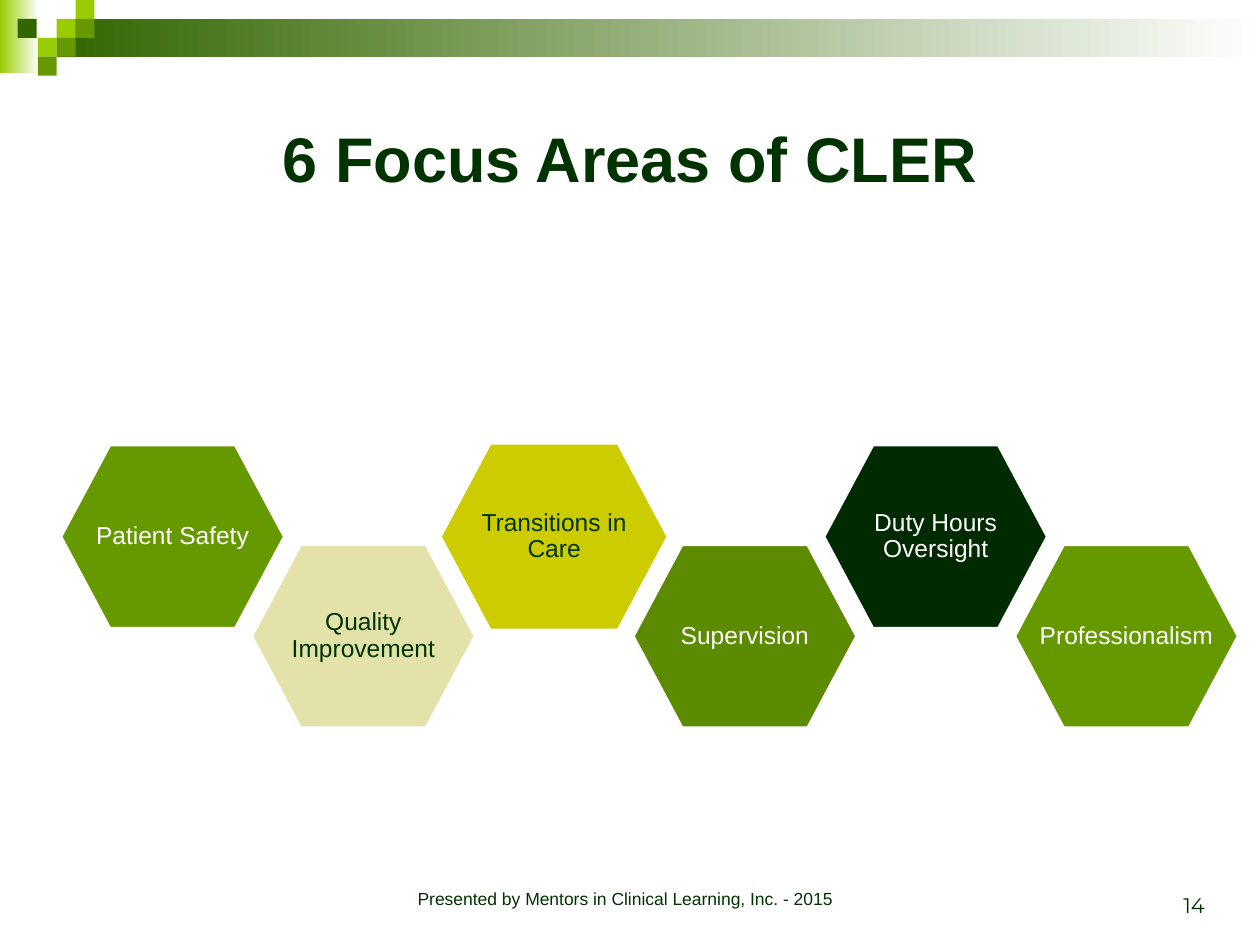
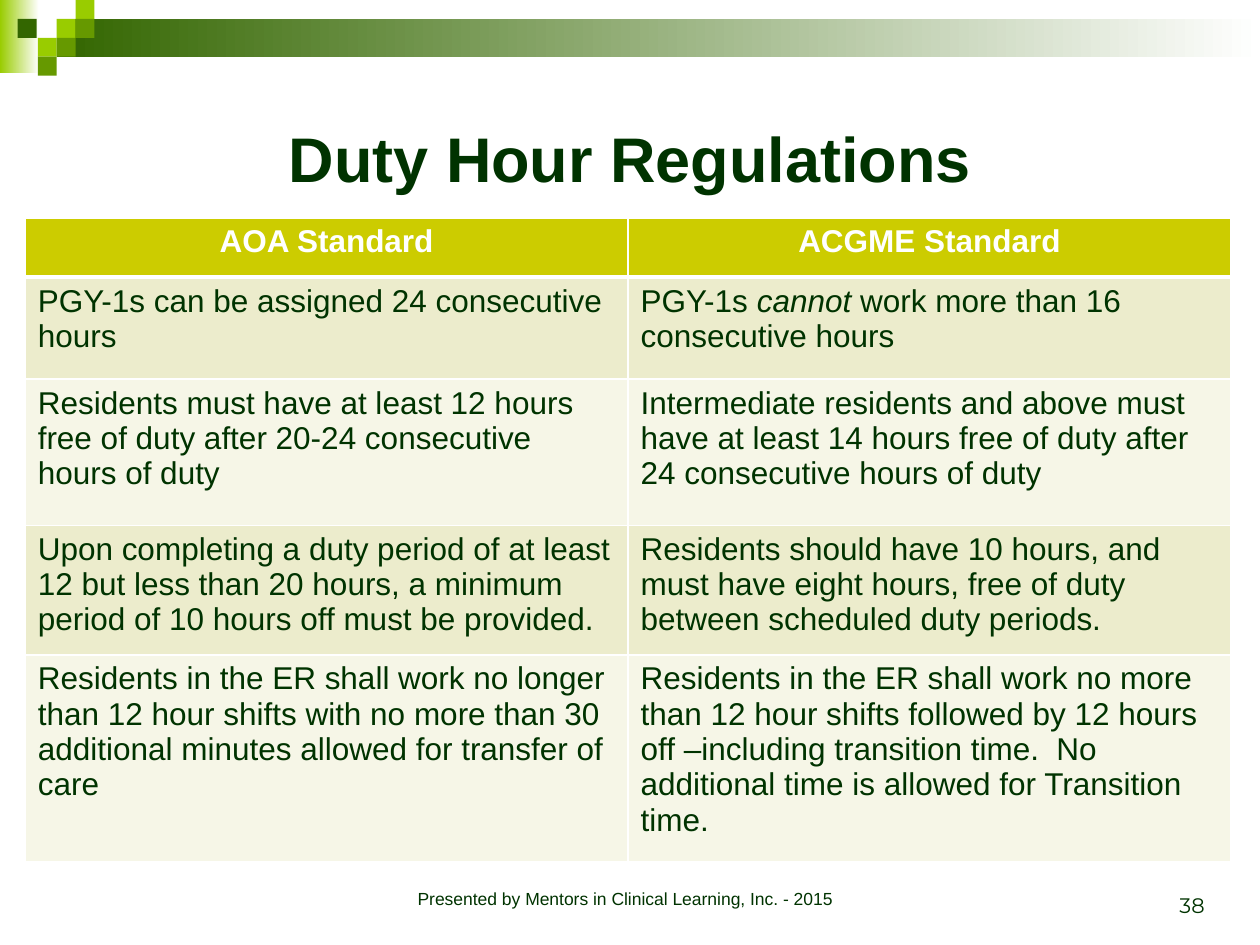
from lxml.etree import SubElement
from pptx import Presentation
from pptx.dml.color import RGBColor
from pptx.enum.shapes import MSO_SHAPE as Shape
from pptx.enum.text import MSO_ANCHOR as Anchor, PP_ALIGN as Align
from pptx.oxml.ns import qn
from pptx.util import Inches, Pt

# Shared palette
WHITE = RGBColor(0xFF, 0xFF, 0xFF)
INK = RGBColor(0x00, 0x33, 0x00)
LIME = RGBColor(0x99, 0xCC, 0x00)
LEAF = RGBColor(0x66, 0x99, 0x00)
MOSS = RGBColor(0x5C, 0x8A, 0x00)
FOREST = RGBColor(0x33, 0x66, 0x00)
NIGHT = RGBColor(0x00, 0x2A, 0x00)
OLIVE = RGBColor(0xCC, 0xCC, 0x00)
SAND = RGBColor(0xE2, 0xE2, 0xAA)
ROW_DARK = RGBColor(0xEC, 0xEC, 0xCC)
ROW_LIGHT = RGBColor(0xF6, 0xF6, 0xE7)

# Shared text styles
TITLE = {"name": "Arial", "size": Pt(36), "bold": True, "color": INK}
FOOTER = {"name": "Arial", "size": Pt(10), "color": INK}
NUMBER = {"name": "Montserrat", "size": Pt(12), "color": INK}
HEX_LABEL = {"name": "Arial", "size": Pt(14)}
HEADING = {"name": "Arial", "size": Pt(18), "bold": True, "color": WHITE}
BODY = {"name": "Arial", "size": Pt(18), "bold": False, "color": INK}

CREDIT = "Presented by Mentors in Clinical Learning, Inc. - 2015"

# Corner squares: left, top, colour
SQUARE = 0.15
SQUARES = [
    (0.45, 0.15, LIME), (0.6, 0, LIME), (0.6, 0.15, LEAF),
    (0.3, 0.3, LIME), (0.14, 0.15, FOREST),
    (0.45, 0.3, LEAF), (0.3, 0.45, LEAF),
]

FOCUS_AREAS = [
    ("Patient Safety", LEAF, WHITE),
    ("Quality Improvement", SAND, INK),
    ("Transitions in Care", OLIVE, INK),
    ("Supervision", MOSS, WHITE),
    ("Duty Hours Oversight", NIGHT, WHITE),
    ("Professionalism", LEAF, WHITE),
]

# Asterisks enclose italic words
REGULATIONS = [
    ("AOA Standard", "ACGME Standard"),
    ("PGY-1s can be assigned 24 consecutive hours",
     "PGY-1s *cannot* work more than 16 consecutive hours"),
    ("Residents must have at least 12 hours free of duty after 20-24 "
     "consecutive hours of duty",
     "Intermediate residents and above must have at least 14 hours free of "
     "duty after 24 consecutive hours of duty"),
    ("Upon completing a duty period of at least 12 but less than 20 hours, "
     "a minimum period of 10 hours off must be provided.",
     "Residents should have 10 hours, and must have eight hours, free of "
     "duty between scheduled duty periods."),
    ("Residents in the ER shall work no longer than 12 hour shifts with no "
     "more than 30 additional minutes allowed for transfer of care",
     "Residents in the ER shall work no more than 12 hour shifts followed by "
     "12 hours off –including transition time.  No additional time is "
     "allowed for Transition time."),
]
ROW_HEIGHTS = [0.47, 0.81, 1.16, 1.03, 1.64]


def write(frame, text, style, align=Align.LEFT):
    """Fill the frame's paragraph, with *starred* words in italics."""
    paragraph = frame.paragraphs[0]
    paragraph.alignment = align
    for index, part in enumerate(text.split("*")):
        run = paragraph.add_run()
        run.text = part
        for key, value in style.items():
            if key == "color":
                run.font.color.rgb = value
            else:
                setattr(run.font, key, value)
        if index % 2:
            run.font.italic = True
    return paragraph


def add_label(slide, box, text, style, align=Align.CENTER, anchor=Anchor.TOP):
    frame = slide.shapes.add_textbox(*map(Inches, box)).text_frame
    frame.word_wrap = True
    frame.vertical_anchor = anchor
    write(frame, text, style, align)


def add_block(slide, box, color, fades=False):
    block = slide.shapes.add_shape(Shape.RECTANGLE, *map(Inches, box))
    block.shadow.inherit = False
    block.line.fill.background()
    if fades:
        block.fill.gradient()
        block.fill.gradient_angle = 0
        for stop, shade in zip(block.fill.gradient_stops, (color, WHITE)):
            stop.color.rgb = shade
    else:
        block.fill.solid()
        block.fill.fore_color.rgb = color


def add_frame(deck, title, number):
    """Blank slide with the band, title, credit and slide number."""
    slide = deck.slides.add_slide(deck.slide_layouts[6])
    add_block(slide, (0, 0, 0.31, 0.58), LIME, fades=True)
    add_block(slide, (0.45, 0.15, 9.55, 0.3), FOREST, fades=True)
    for left, top, color in SQUARES:
        add_block(slide, (left, top, SQUARE, SQUARE), color)
    add_label(slide, (0.5, 0.5, 9, 1.5), title, TITLE, anchor=Anchor.MIDDLE)
    add_label(slide, (2.75, 7, 4.42, 0.33), CREDIT, FOOTER)
    add_label(slide, (7.33, 6.83, 2.33, 0.5), number, NUMBER,
              Align.RIGHT, Anchor.BOTTOM)
    return slide


def add_hexagon(slide, box, text, fill, ink, outlined):
    left, top, width, height = box
    inset = 0.39
    right, middle, bottom = left + width, top + height / 2, top + height
    corners = [(left, middle), (left + inset, top), (right - inset, top),
               (right, middle), (right - inset, bottom), (left + inset, bottom)]
    points = [(Inches(x), Inches(y)) for x, y in corners]
    outline = slide.shapes.build_freeform(*points[0])
    outline.add_line_segments(points[1:], close=True)
    hexagon = outline.convert_to_shape()
    hexagon.shadow.inherit = False
    hexagon.fill.solid()
    hexagon.fill.fore_color.rgb = fill
    if outlined:
        hexagon.line.color.rgb = WHITE
        hexagon.line.width = Pt(2)
    else:
        hexagon.line.fill.background()
    frame = hexagon.text_frame
    settings = {"word_wrap": True, "vertical_anchor": Anchor.MIDDLE,
                "margin_left": Inches(0.16), "margin_right": Inches(0.16),
                "margin_top": Inches(0.14), "margin_bottom": Inches(0.14)}
    for key, value in settings.items():
        setattr(frame, key, value)
    label = write(frame, text, {**HEX_LABEL, "color": ink}, Align.CENTER)
    label.line_spacing = 0.9


def add_focus_areas(slide, box):
    """Zigzag of hexagons: even ones at the top, odd ones at the bottom."""
    left, top, width, height = box
    hex_width, hex_height = 1.78, 1.46
    step = (width - hex_width) / (len(FOCUS_AREAS) - 1)
    drop = height - hex_height
    for index, (text, fill, ink) in enumerate(FOCUS_AREAS):
        place = (left + index * step, top + index % 2 * drop,
                 hex_width, hex_height)
        add_hexagon(slide, place, text, fill, ink, outlined=fill != OLIVE)


def add_borders(cell, widths):
    properties = cell._tc.get_or_add_tcPr()
    for side, points in widths.items():
        line = SubElement(properties, qn(f"a:ln{side}"), w=str(Pt(points)))
        solid = SubElement(line, qn("a:solidFill"))
        SubElement(solid, qn("a:srgbClr"), val=str(WHITE))


def add_regulations(slide, box):
    columns = len(REGULATIONS[0])
    table = slide.shapes.add_table(
        len(REGULATIONS), columns, *map(Inches, box)).table
    for column in table.columns:
        column.width = Inches(box[2] / columns)
    for index, texts in enumerate(REGULATIONS):
        table.rows[index].height = Inches(ROW_HEIGHTS[index])
        header = index == 0
        fill = OLIVE if header else (ROW_DARK if index % 2 else ROW_LIGHT)
        borders = {"L": 1, "R": 1, "T": 3 if index == 1 else 1,
                   "B": 3 if header else 1}
        for column, text in enumerate(texts):
            cell = table.cell(index, column)
            add_borders(cell, borders)
            cell.fill.solid()
            cell.fill.fore_color.rgb = fill
            write(cell.text_frame, text, HEADING if header else BODY,
                  Align.CENTER if header else Align.LEFT)


def main():
    deck = Presentation()
    deck.slide_width, deck.slide_height = Inches(10), Inches(7.5)

    focus = add_frame(deck, "6 Focus Areas of CLER", "14")
    add_focus_areas(focus, (0.48, 3.53, 9.35, 2.25))

    duty = add_frame(deck, "Duty Hour Regulations", "38")
    add_regulations(duty, (0.2, 1.73, 9.57, sum(ROW_HEIGHTS)))

    deck.save("out.pptx")


if __name__ == "__main__":
    main()
